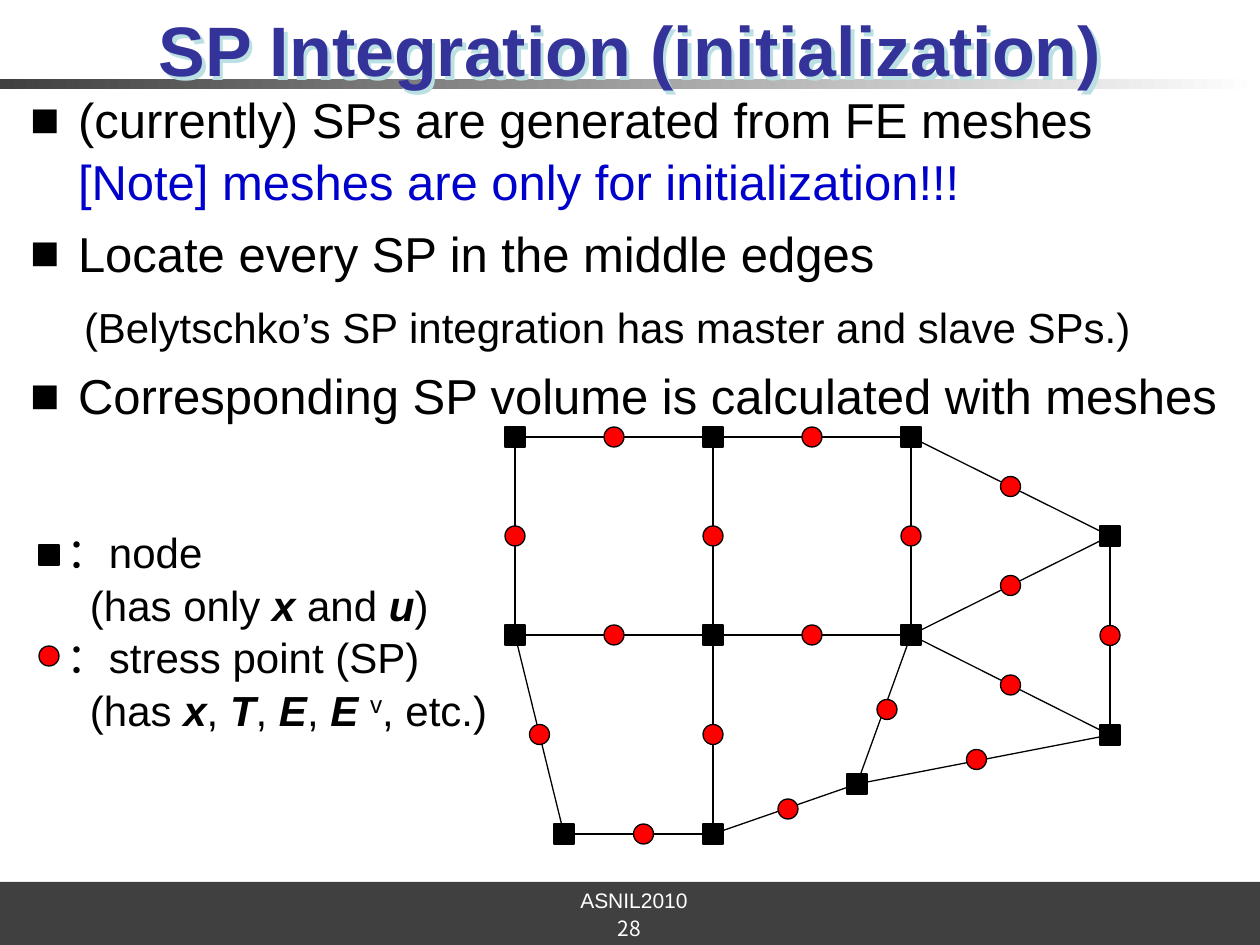
import pptx
import pptx.dml.color
import pptx.enum.shapes
import pptx.enum.text
import pptx.oxml
import pptx.util

EMU_PER_PX = 914400 / 126
NS = 'xmlns:a="http://schemas.openxmlformats.org/drawingml/2006/main"'
SHAPE = pptx.enum.shapes.MSO_SHAPE
ALIGN = pptx.enum.text.PP_ALIGN
ANCHOR = pptx.enum.text.MSO_ANCHOR

BLACK, WHITE, RED, DARK = "000000", "FFFFFF", "FF0000", "404040"
NAVY, BLUE, PALE = "333399", "0000CC", "BBE0E3"


def px(n):
    return pptx.util.Emu(round(n * EMU_PER_PX))


def rgb(code):
    return pptx.dml.color.RGBColor.from_string(code)


def xml(text):
    return pptx.oxml.parse_xml(text)


class Deck:
    font = "Arial"
    marker = 20  # width of nodes and stress points
    line_width = 0.75

    def __init__(self, width, height):
        self.prs = pptx.Presentation()
        self.prs.slide_width, self.prs.slide_height = px(width), px(height)
        self.s = self.prs.slides.add_slide(self.prs.slide_layouts[6])

    def bar(self, y, h, *colors):
        sp = self.s.shapes.add_shape(SHAPE.RECTANGLE, 0, px(y), px(1260), px(h))
        sp.shadow.inherit = False
        sp.line.fill.background()
        if len(colors) == 1:
            sp.fill.solid()
            sp.fill.fore_color.rgb = rgb(colors[0])
        else:
            sp.fill.gradient()
            sp.fill.gradient_angle = 0
            for stop, color in zip(sp.fill.gradient_stops, colors):
                stop.color.rgb = rgb(color)

    def edge(self, start, end):
        c = self.s.shapes.add_connector(
            pptx.enum.shapes.MSO_CONNECTOR.STRAIGHT, *map(px, start + end))
        c.line.color.rgb = rgb(BLACK)
        c.line.width = pptx.util.Pt(self.line_width)
        c._element.spPr.append(xml(f"<a:effectLst {NS}/>"))

    def mark(self, kind, x, y, color):
        half = self.marker / 2
        sp = self.s.shapes.add_shape(
            kind, px(x - half), px(y - half), px(self.marker), px(self.marker))
        sp.shadow.inherit = False
        sp.fill.solid()
        sp.fill.fore_color.rgb = rgb(color)
        sp.line.color.rgb = rgb(BLACK)
        sp.line.width = pptx.util.Pt(self.line_width)

    def node(self, x, y):
        self.mark(SHAPE.RECTANGLE, x, y, BLACK)

    def stress_point(self, x, y):
        self.mark(SHAPE.OVAL, x, y, RED)

    def box(self, x, y, w, h, wrap=True, anchor=ANCHOR.TOP):
        sp = self.s.shapes.add_textbox(px(x), px(y), px(w), px(h))
        tf = sp.text_frame
        tf.word_wrap = wrap
        tf.vertical_anchor = anchor
        tf.margin_left = tf.margin_right = tf.margin_top = tf.margin_bottom = 0
        return sp

    def style(self, r, size, color=BLACK, font=None):
        r.font.size = pptx.util.Pt(size)
        r.font.name = font or self.font
        r.font.color.rgb = rgb(color)

    def label(self, text, x, y, w, h, size, color, font=None, **layout):
        sp = self.box(x, y, w, h, **layout)
        sp.text_frame.text = text
        p = sp.text_frame.paragraphs[0]
        p.alignment = ALIGN.CENTER
        self.style(p.runs[0], size, color, font)
        return sp

    def title(self, text, *place):
        sp = self.label(text, *place, 40, NAVY, wrap=False, anchor=ANCHOR.BOTTOM)
        sp.text_frame.paragraphs[0].runs[0].font.bold = True
        sp._element.spPr.append(xml(
            f'<a:effectLst {NS}><a:outerShdw dist="35900" dir="2700000">'
            f'<a:srgbClr val="{PALE}"/></a:outerShdw></a:effectLst>'))

    def paragraphs(self, tf, count, spacing):
        for i in range(count):
            p = tf.paragraphs[0] if i == 0 else tf.add_paragraph()
            p.line_spacing = spacing
            yield p

    def indent(self, p, left, first=0):
        pPr = p._p.get_or_add_pPr()
        pPr.set("marL", str(px(left)))
        pPr.set("indent", str(px(first)))
        return pPr

    def body(self, items, *place):
        tf = self.box(*place).text_frame
        for p, item in zip(self.paragraphs(tf, len(items), 1.05), items):
            text, size, before, bullet = item
            p.text = text
            if before:
                p.space_before = pptx.util.Pt(before)
            if bullet:
                pPr = self.indent(p, 48, -48)
                pPr.append(xml(f'<a:buFont {NS} typeface="{self.font}"/>'))
                pPr.append(xml(f'<a:buChar {NS} char="■"/>'))
            else:
                self.indent(p, 54)
            for r, color in zip(p.runs, (BLACK, BLUE)):
                self.style(r, size, color)

    def legend(self, lines, *place):
        """Each line is (left indent, runs); a run is (text, kind)."""
        tf = self.box(*place).text_frame
        for p, (left, runs) in zip(self.paragraphs(tf, len(lines), 1.04), lines):
            self.indent(p, left)
            for text, kind in runs:
                r = p.add_run()
                r.text = text
                self.style(r, 24)
                if kind == "symbol":
                    r.font.bold = r.font.italic = True
                elif kind == "super":
                    r._r.get_or_add_rPr().set("baseline", "30000")


def main():
    d = Deck(1260, 945)

    # Header rule and footer
    d.bar(79, 10, DARK, WHITE)
    d.bar(882, 63, DARK)
    d.label("ASNIL2010", 580, 888, 108, 24, 12, WHITE, wrap=False)
    d.label("28", 557, 914, 145, 28, 12, WHITE, "Noto Sans CJK JP",
            anchor=ANCHOR.MIDDLE)

    # Title and bullets
    d.title("SP Integration (initialization)", 0, 5, 1260, 86)
    d.body([
        ("(currently) SPs are generated from FE meshes\v"
         "[Note] meshes are only for initialization!!!", 28, 0, True),
        ("Locate every SP in the middle edges", 28, 5.6, True),
        ("(Belytschko’s SP integration has master and slave SPs.)", 24, 9.5, False),
        ("Corresponding SP volume is calculated with meshes", 28, 6.5, True),
    ], 30, 87, 1230, 795)

    # Mesh: nodes by name (column letter, row number)
    nodes = {"a1": (515, 437), "b1": (713, 437), "c1": (911, 437),
             "a2": (515, 635), "b2": (713, 635), "c2": (911, 635),
             "a3": (564, 834), "b3": (713, 834), "c3": (857, 784),
             "d1": (1110, 536), "d2": (1110, 735)}
    edges = ("a1-b1 b1-c1 a2-b2 b2-c2 a3-b3 b3-c3 c3-d2 a1-a2 a2-a3 "
             "b1-b2 b2-b3 c1-c2 c2-c3 c1-d1 c2-d1 c2-d2 d1-d2").split()
    # Stress points that sit slightly beside the middle of their edge
    shift = {"a3-b3": 5, "b3-c3": 3, "c2-c3": 3, "c3-d2": -7}

    ends = {name: [nodes[n] for n in name.split("-")] for name in edges}
    for start, end in ends.values():
        d.edge(start, end)
    for point in nodes.values():
        d.node(*point)
    for name, ((x1, y1), (x2, y2)) in ends.items():
        d.stress_point((x1 + x2) / 2 + shift.get(name, 0), (y1 + y2) / 2)

    # Legend
    d.node(49, 555)
    d.stress_point(49, 656)
    d.legend([
        (0, [("：node", "")]),
        (23, [("(has only ", ""), ("x", "symbol"), (" and ", ""),
              ("u", "symbol"), (")", "")]),
        (0, [("：stress point (SP)", "")]),
        (23, [("(has ", ""), ("x", "symbol"), (", ", ""), ("T", "symbol"),
              (", ", ""), ("E", "symbol"), (", ", ""), ("E ", "symbol"),
              ("v", "super"), (", etc.)", "")]),
    ], 67, 525, 440, 202)

    d.prs.save("out.pptx")


if __name__ == "__main__":
    main()
